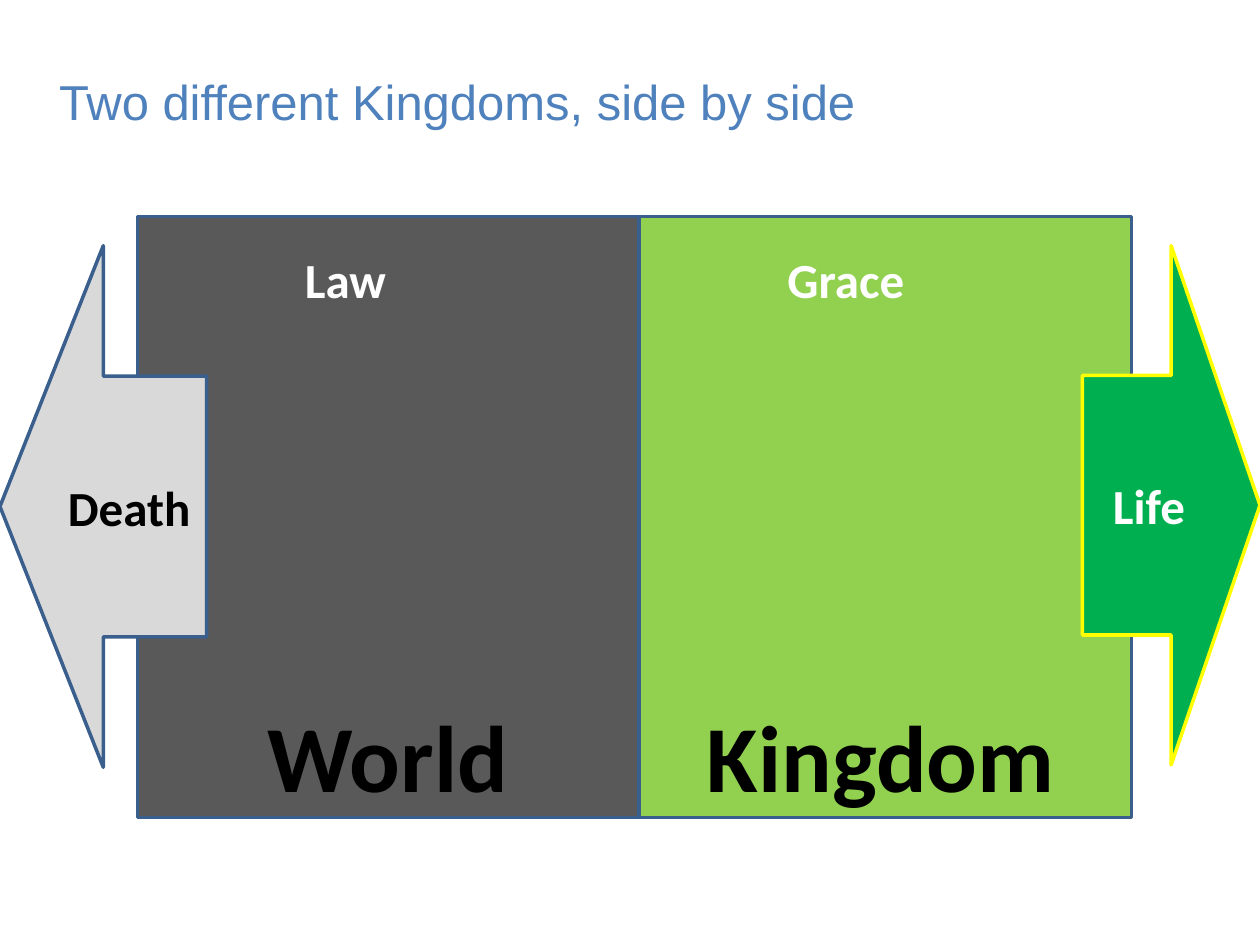
import pptx
import pptx.util
import pptx.dml.color
import pptx.enum.shapes
import pptx.enum.text
from dataclasses import dataclass

Inches = pptx.util.Inches
Shape = pptx.enum.shapes.MSO_SHAPE
Anchor = pptx.enum.text.MSO_ANCHOR
Align = pptx.enum.text.PP_ALIGN


@dataclass(frozen=True)
class Theme:
    head: str = "Arial"
    body: str = "Calibri"
    big: int = 54
    mid: int = 28
    edge: int = 2
    black: str = "000000"
    white: str = "FFFFFF"
    blue: str = "4F81BD"
    navy: str = "3A5F8C"
    dark: str = "595959"
    pale: str = "D9D9D9"
    lime: str = "92D050"
    green: str = "00B050"
    gold: str = "FFFF00"


THEME = Theme()
WIDE, HIGH = 10, 7.5

# Grid: the two realms share one row, the labels another
REALM_W, REALM_H, REALM_TOP = 3.98, 4.77, 1.72
LEFT, MID = 1.09, 5
ARROW_TOP = 1.95
LABEL_TOP, LABEL_W, LABEL_H = 2.03, 1.64, 0.42


def color(code):
    return pptx.dml.color.RGBColor.from_string(code)


def write(frame, text, size, tint, face=THEME.body, bold=True):
    """Put one styled paragraph in a frame and return it."""
    para = frame.paragraphs[0]
    para.text = text
    font = para.font
    font.name, font.size, font.bold = face, pptx.util.Pt(size), bold
    font.color.rgb = color(tint)
    return para


def block(slide, kind, box, text, size, tint, fill, line, anchor):
    """Add a filled, outlined shape with centred text."""
    shape = slide.shapes.add_shape(kind, *map(Inches, box))
    shape.shadow.inherit = False
    shape.fill.solid()
    shape.fill.fore_color.rgb = color(fill)
    shape.line.color.rgb = color(line)
    shape.line.width = pptx.util.Pt(THEME.edge)
    shape.text_frame.vertical_anchor = anchor
    write(shape.text_frame, text, size, tint).alignment = Align.CENTER


def realm(slide, left, text, fill):
    block(slide, Shape.RECTANGLE, (left, REALM_TOP, REALM_W, REALM_H),
          text, THEME.big, THEME.black, fill, THEME.navy, Anchor.BOTTOM)


def arrow(slide, kind, left, wide, high, text, tint, fill, line):
    block(slide, kind, (left, ARROW_TOP, wide, high),
          text, THEME.mid, tint, fill, line, Anchor.MIDDLE)


def plain(frame, text, tint, **style):
    """Write left-aligned text in a frame without margins."""
    frame.margin_left = frame.margin_right = 0
    frame.margin_top = frame.margin_bottom = 0
    frame.word_wrap = True
    frame.auto_size = pptx.enum.text.MSO_AUTO_SIZE.NONE
    frame.vertical_anchor = Anchor.TOP
    para = write(frame, text, THEME.mid, tint, **style)
    para.alignment = Align.LEFT
    para.line_spacing = 0.9


def label(slide, left, text):
    box = slide.shapes.add_textbox(
        *map(Inches, (left, LABEL_TOP, LABEL_W, LABEL_H)))
    plain(box.text_frame, text, THEME.white)


def title(slide, text):
    head = slide.shapes.title
    head.left, head.top = Inches(0.47), Inches(0.62)
    head.width, head.height = Inches(7.34), Inches(LABEL_H)
    plain(head.text_frame, text, THEME.blue, face=THEME.head, bold=False)


def main():
    deck = pptx.Presentation()
    deck.slide_width, deck.slide_height = Inches(WIDE), Inches(HIGH)
    slide = deck.slides.add_slide(deck.slide_layouts[5])
    title(slide, "Two different Kingdoms, side by side")

    # Realms, the left one overlapping the right
    realm(slide, MID, "Kingdom", THEME.lime)
    realm(slide, LEFT, "World", THEME.dark)

    # Arrows out to both slide edges
    arrow(slide, Shape.RIGHT_ARROW, WIDE - 1.41, 1.41, 4.12,
          "Life", THEME.white, THEME.green, THEME.gold)
    arrow(slide, Shape.LEFT_ARROW, 0, 1.64, 4.14,
          "Death", THEME.black, THEME.pale, THEME.navy)

    # Labels at the top of each realm
    label(slide, 6.25, "Grace")
    label(slide, 2.42, "Law")

    deck.save("out.pptx")


if __name__ == "__main__":
    main()
